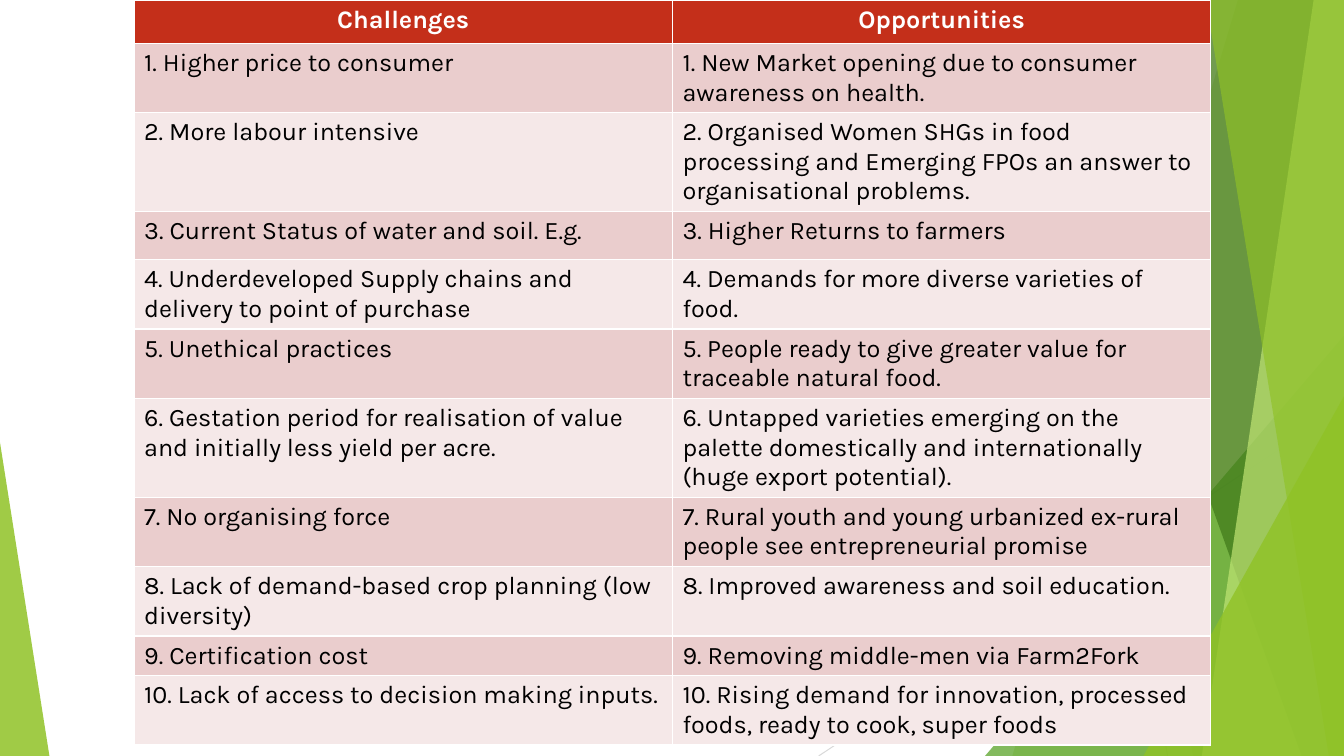
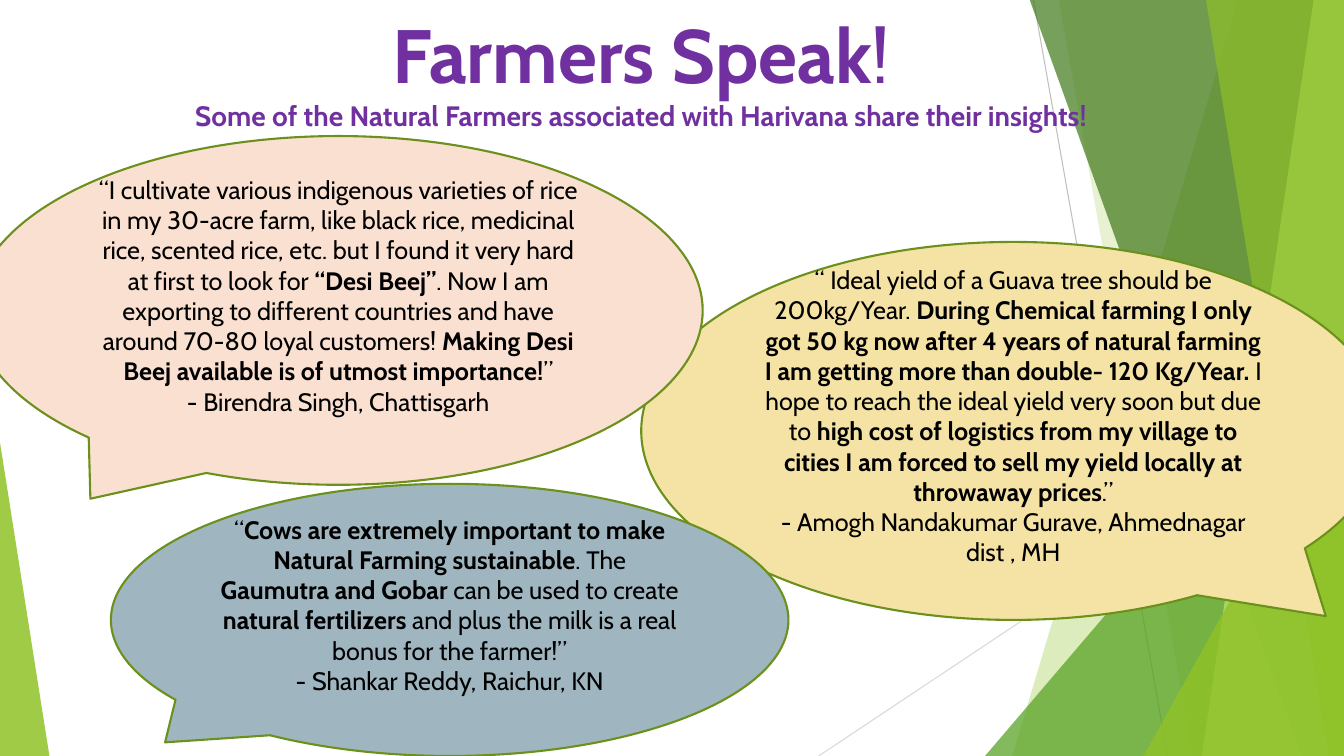
from lxml import etree
from pptx import Presentation
from pptx.dml.color import RGBColor
from pptx.enum.shapes import MSO_CONNECTOR, MSO_SHAPE
from pptx.enum.text import MSO_ANCHOR, MSO_AUTO_SIZE, PP_ALIGN
from pptx.oxml.ns import qn
from pptx.util import Inches, Pt

LEFT, CENTER = PP_ALIGN.LEFT, PP_ALIGN.CENTER
TOP, MIDDLE = MSO_ANCHOR.TOP, MSO_ANCHOR.MIDDLE
TRIANGLE, CALLOUT = MSO_SHAPE.ISOSCELES_TRIANGLE, MSO_SHAPE.OVAL_CALLOUT
STRAIGHT = MSO_CONNECTOR.STRAIGHT
GROW = MSO_AUTO_SIZE.SHAPE_TO_FIT_TEXT
W, H = 13.33, 7.5


class Theme:
    table_font, speech_font = "Karla", "Cabin"
    title, subtitle, body = 54, 20, 18
    black, white, purple = "000000", "FFFFFF", "7030A0"
    header, bands = "C42F1A", ("EACDCD", "F5E8E8")
    green, leaf, forest, lime = "90C226", "54A021", "3F7819", "C0E474"
    outline = "6B901C"
    peach, sand, slate = "FAE0D1", "F5E3A5", "9FB6C0"


def write(p, text, size=Theme.body, font=Theme.speech_font, color=Theme.black,
          align=CENTER, bold=False):
    """Fill a paragraph; each * in the text switches bold on or off."""
    p.alignment = align
    for i, part in enumerate(text.split("*")):
        if part:
            r = p.add_run()
            r.text = part
            r.font.name, r.font.size = font, Pt(size)
            r.font.bold = bold != bool(i % 2)
            r.font.color.rgb = RGBColor.from_string(color)


def paint(shape, color, opacity=100):
    """Flat fill without shadow or outline."""
    shape.shadow.inherit = False
    shape.line.fill.background()
    shape.fill.solid()
    shape.fill.fore_color.rgb = RGBColor.from_string(color)
    if opacity < 100:
        clr = shape._element.spPr.find(".//" + qn("a:srgbClr"))
        etree.SubElement(clr, qn("a:alpha"), val=str(opacity * 1000))


prs = Presentation()
prs.slide_width, prs.slide_height = Inches(W), Inches(H)

# Slide 1: challenges and opportunities
s = prs.slides.add_slide(prs.slide_layouts[6])

# Shared backdrop: drawn once as a group, then moved to the master
backdrop = s.shapes.add_group_shape()
for x1, y1, x2, y2, color in [(10.25, 0, 11.58, H, "BFBFBF"),
                              (W, 4.03, 8.12, H, "D9D9D9")]:
    line = backdrop.shapes.add_connector(
        STRAIGHT, Inches(x1), Inches(y1), Inches(x2), Inches(y2))
    line.line.width = Pt(0.75)
    line.line.color.rgb = RGBColor.from_string(color)
    etree.SubElement(line._element.spPr, qn("a:effectLst"))

# Right-hand bands give top and bottom x; triangles give left, top, width, tip
for kind, *geometry, color, opacity in [
        ("band", 12.28, 10.04, Theme.green, 30),
        ("band", 10.5, 11.83, Theme.green, 20),
        ("triangle", 9.77, 3.33, 3.56, 1, Theme.leaf, 72),
        ("band", 10.21, 12.91, Theme.forest, 70),
        ("band", 13.03, 11.92, Theme.lime, 70),
        ("band", 11.96, 13.18, Theme.green, 65),
        ("triangle", 11.34, 3.93, 1.99, 1, Theme.green, 80),
        ("triangle", 0, 4.39, 0.49, 0, Theme.green, 85)]:
    if kind == "band":
        x_top, x_bottom = geometry
        outline = backdrop.shapes.build_freeform(Inches(x_top), Inches(-0.01))
        outline.add_line_segments(
            [(Inches(x), Inches(y)) for x, y in [(W, -0.01), (W, H), (x_bottom, H)]])
        sp = outline.convert_to_shape()
    else:
        x, y, w, tip = geometry
        sp = backdrop.shapes.add_shape(
            TRIANGLE, Inches(x), Inches(y), Inches(w), Inches(H - y))
        sp.adjustments[0] = tip
    paint(sp, color, opacity)
for i, props in enumerate(backdrop._element.xpath(".//p:cNvPr")):
    props.set("id", str(100 + i))
prs.slide_master.shapes.element.insert(2, backdrop._element)

# Tables: top, whether there is a header, then height and texts of each row
tables = [
    (0, True, [
        (0.43, "Challenges", "Opportunities"),
        (0.68, "1. Higher price to consumer",
         "1. New Market opening due to consumer awareness on health."),
        (0.95, "2. More labour intensive",
         "2. Organised Women SHGs in food processing and Emerging FPOs an answer "
         "to organisational problems."),
        (0.48, "3. Current Status of water and soil. E.g.",
         "3. Higher Returns to farmers"),
        (0.67, "4. Underdeveloped Supply chains and delivery to point of purchase",
         "4. Demands for more diverse varieties of food."),
        (0.67, "5. Unethical practices",
         "5. People ready to give greater value for traceable natural food."),
        (0.95, "6. Gestation period for realisation of value and initially less "
         "yield per acre.",
         "6. Untapped varieties emerging on the palette domestically and "
         "internationally (huge export potential)."),
        (0.67, "7. No organising force",
         "7. Rural youth and young urbanized ex-rural people see entrepreneurial "
         "promise"),
        (0.67, "8. Lack of demand-based crop planning (low diversity)",
         "8. Improved awareness and soil education.")]),
    (6.31, False, [
        (0.39, "9. Certification cost", "9. Removing middle-men via Farm2Fork"),
        (0.67, "10. Lack of access to decision making inputs.",
         "10. Rising demand for innovation, processed foods, ready to cook, "
         "super foods")]),
]
for top, has_header, rows in tables:
    height = sum(row[0] for row in rows)
    table = s.shapes.add_table(len(rows), 2, Inches(1.33), Inches(top),
                               Inches(10.68), Inches(height)).table
    table.first_row = has_header
    for i, (row_height, *texts) in enumerate(rows):
        table.rows[i].height = Inches(row_height)
        head = has_header and i == 0
        fill = Theme.header if head else Theme.bands[(i - has_header) % 2]
        for j, text in enumerate(texts):
            cell = table.cell(i, j)
            cell.fill.solid()
            cell.fill.fore_color.rgb = RGBColor.from_string(fill)
            write(cell.text_frame.paragraphs[0], text, font=Theme.table_font,
                  color=Theme.white if head else Theme.black,
                  align=CENTER if head else LEFT, bold=head)

# Slide 2: farmers' quotes
s = prs.slides.add_slide(prs.slide_layouts[5])
title = s.shapes.title
title.left, title.top = Inches(1.58), Inches(0.03)
title.width, title.height = Inches(9.56), Inches(1.35)
tf = title.text_frame
tf.word_wrap, tf.auto_size, tf.vertical_anchor = True, GROW, TOP
write(tf.paragraphs[0], "*Farmers Speak*!", size=Theme.title, color=Theme.purple)
write(tf.add_paragraph(),
      "Some of the Natural Farmers associated with Harivana share their insights!",
      size=Theme.subtitle, color=Theme.purple, bold=True)

# Speech balloons, back to front: box, pointer, fill, quote, speaker
balloons = [
    ((6.36, 2.4, 7.38, 3.75), (0.42, 0.49), Theme.sand,
     "“ Ideal yield of a Guava tree should be 200kg/Year. *During Chemical farming "
     "I only got 50 kg now after 4 years of natural farming I am getting more than "
     "double- 120 Kg/Year. *I hope to reach the ideal yield very soon but due to "
     "*high cost of logistics from my village to cities I am forced to sell my "
     "yield locally at throwaway prices*.”",
     "- Amogh Nandakumar Gurave, Ahmednagar dist , MH"),
    ((-0.26, 1.35, 7.23, 3.46), (-0.34, 0.54), Theme.peach,
     "“I cultivate various indigenous varieties of rice in my 30-acre farm, like "
     "black rice, medicinal rice, scented rice, etc. but I found it very hard at "
     "first to look for *“Desi Beej”*. Now I am exporting to different countries "
     "and have around 70-80 loyal customers! *Making Desi Beej available is of "
     "utmost importance!*”",
     "- Birendra Singh, Chattisgarh"),
    ((1.1, 4.8, 6.72, 2.7), (-0.42, 0.45), Theme.slate,
     "“*Cows are extremely important to make Natural Farming sustainable*. The "
     "*Gaumutra and Gobar *can be used to create *natural fertilizers* and plus "
     "the milk is a real bonus for the farmer!”",
     "- Shankar Reddy, Raichur, KN"),
]
for box, pointer, fill, quote, speaker in balloons:
    sp = s.shapes.add_shape(CALLOUT, *[Inches(v) for v in box])
    sp.adjustments[0], sp.adjustments[1] = pointer
    paint(sp, fill)
    sp.line.color.rgb = RGBColor.from_string(Theme.outline)
    sp.line.width = Pt(1.5)
    tf = sp.text_frame
    tf.word_wrap, tf.vertical_anchor = True, MIDDLE
    tf.margin_bottom = Inches(0.35)  # lifts the quote above the pointer
    write(tf.paragraphs[0], quote)
    write(tf.add_paragraph(), speaker)

prs.save("out.pptx")
